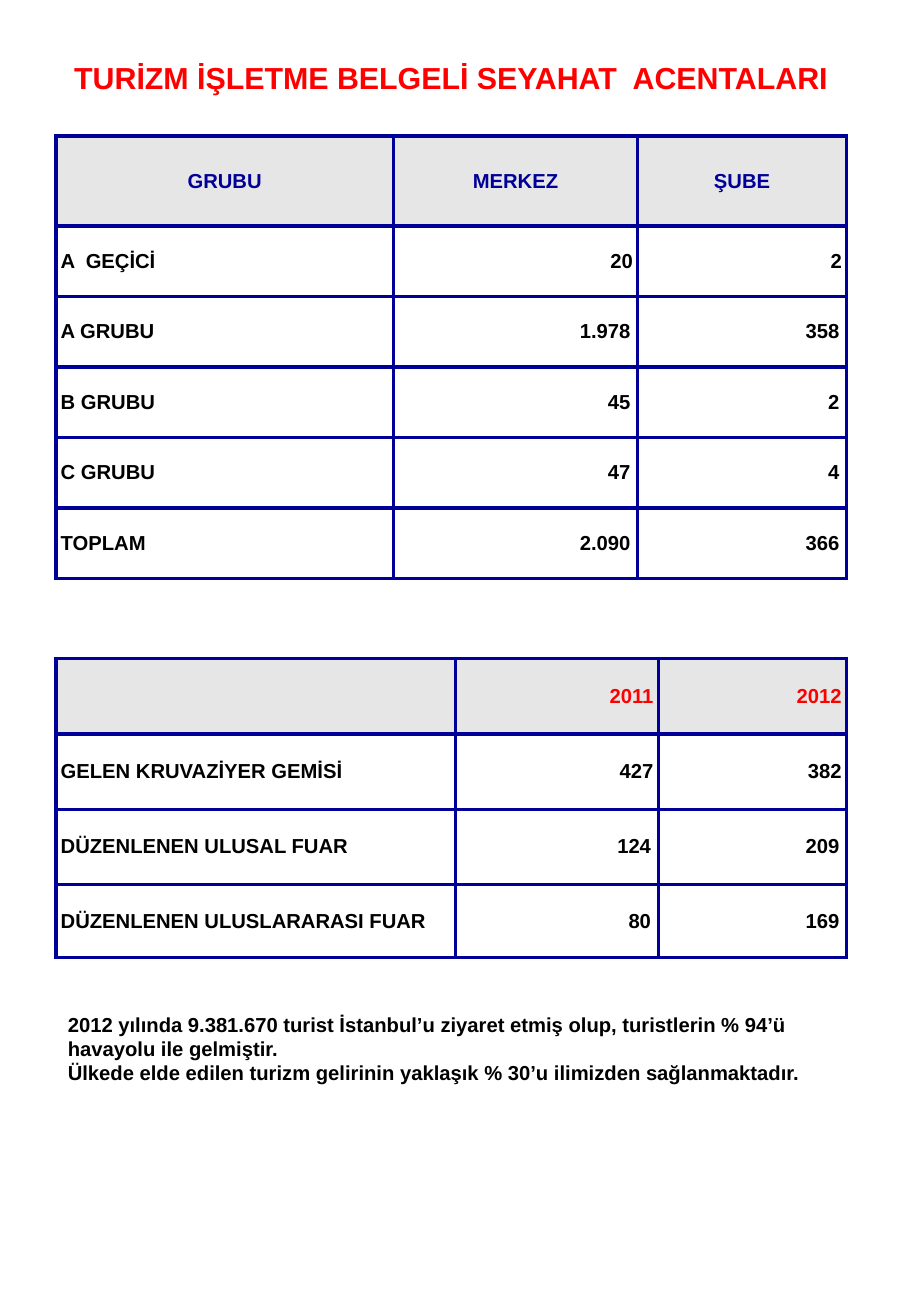
from itertools import product

from lxml import etree
from pptx import Presentation
from pptx import util as u
from pptx.dml.color import RGBColor
from pptx.enum import text
from pptx.oxml.ns import qn

NAVY = RGBColor(0x00, 0x00, 0x99)
RED = RGBColor(0xFF, 0x00, 0x00)
BLACK = RGBColor(0x00, 0x00, 0x00)
GREY = RGBColor(0xE7, 0xE6, 0xE6)
WHITE = RGBColor(0xFF, 0xFF, 0xFF)

TITLE = "TURİZM İŞLETME BELGELİ SEYAHAT  ACENTALARI"
AGENCIES = {
    "rows": [
        ("GRUBU", "MERKEZ", "ŞUBE"),
        ("A  GEÇİCİ", "20", "2"),
        ("A GRUBU", "1.978", "358"),
        ("B GRUBU", "45", "2"),
        ("C GRUBU", "47", "4"),
        ("TOPLAM", "2.090", "366"),
    ],
    "top": 1.12, "columns": (2.78, 2.01, 1.72), "heights": (0.74,) + (0.58,) * 5,
    "heading_color": NAVY, "heading_align": text.PP_ALIGN.CENTER,
}
EVENTS = {
    "rows": [
        ("", "2011", "2012"),
        ("GELEN KRUVAZİYER GEMİSİ", "427", "382"),
        ("DÜZENLENEN ULUSAL FUAR", "124", "209"),
        ("DÜZENLENEN ULUSLARARASI FUAR", "80", "169"),
    ],
    "top": 5.42, "columns": (3.29, 1.67, 1.55), "heights": (0.62,) * 3 + (0.6,),
    "heading_color": RED, "heading_align": text.PP_ALIGN.RIGHT,
}
SUMMARY = [
    "2012 yılında 9.381.670 turist İstanbul’u ziyaret etmiş olup, turistlerin % 94’ü havayolu ile gelmiştir.",
    "Ülkede elde edilen turizm gelirinin yaklaşık % 30’u ilimizden sağlanmaktadır.",
]
LEFT, WIDTH = 0.46, 6.51
BORDER = u.Pt(2.25)


def write(paragraph, words, size, color, align):
    paragraph.alignment = align
    run = paragraph.add_run()
    run.text = words
    run.font.color.rgb = color
    for key, value in {"name": "Arial", "size": u.Pt(size), "bold": True}.items():
        setattr(run.font, key, value)


def add_lines(slide, lines, top, height, size, color, align, spacing):
    frame = slide.shapes.add_textbox(*map(u.Inches, (LEFT, top, WIDTH, height))).text_frame
    frame.word_wrap = True
    for index, line in enumerate(lines):
        paragraph = frame.add_paragraph() if index else frame.paragraphs[0]
        paragraph.line_spacing = spacing
        write(paragraph, line, size, color, align)


def add_borders(cell):
    properties = cell._tc.get_or_add_tcPr()
    for side in ("lnL", "lnR", "lnT", "lnB"):
        edge = etree.SubElement(properties, qn(f"a:{side}"), w=str(BORDER))
        fill = etree.SubElement(edge, qn("a:solidFill"))
        etree.SubElement(fill, qn("a:srgbClr"), val=str(NAVY))


def add_grid(slide, content):
    rows, columns, heights = content["rows"], content["columns"], content["heights"]
    box = (LEFT, content["top"], WIDTH, sum(heights))
    table = slide.shapes.add_table(len(rows), len(columns), *map(u.Inches, box)).table
    for column, width in zip(table.columns, columns):
        column.width = u.Inches(width)
    for row, height in zip(table.rows, heights):
        row.height = u.Inches(height)
    for r, c in product(range(len(rows)), range(len(columns))):
        cell = table.cell(r, c)
        add_borders(cell)
        cell.fill.solid()
        cell.fill.fore_color.rgb = WHITE if r else GREY
        inset = u.Inches(0.06 if r > 1 and c else 0.04)
        layout = {"margin_left": inset, "margin_right": inset, "margin_top": 0,
                  "margin_bottom": 0, "vertical_anchor": text.MSO_ANCHOR.MIDDLE}
        for key, value in layout.items():
            setattr(cell, key, value)
        if rows[r][c]:
            body_align = text.PP_ALIGN.RIGHT if c else text.PP_ALIGN.LEFT
            write(cell.text_frame.paragraphs[0], rows[r][c], 12,
                  BLACK if r else content["heading_color"],
                  body_align if r else content["heading_align"])


def main():
    deck = Presentation()
    deck.slide_width, deck.slide_height = u.Inches(7.5), u.Inches(10.83)
    slide = deck.slides.add_slide(deck.slide_layouts[6])
    add_lines(slide, [TITLE], 0.47, 0.94, 18, RED, text.PP_ALIGN.CENTER, 0.9)
    for content in (AGENCIES, EVENTS):
        add_grid(slide, content)
    add_lines(slide, SUMMARY, 8.28, 0.71, 12, BLACK, text.PP_ALIGN.LEFT, 1.0)
    deck.save("out.pptx")


if __name__ == "__main__":
    main()
